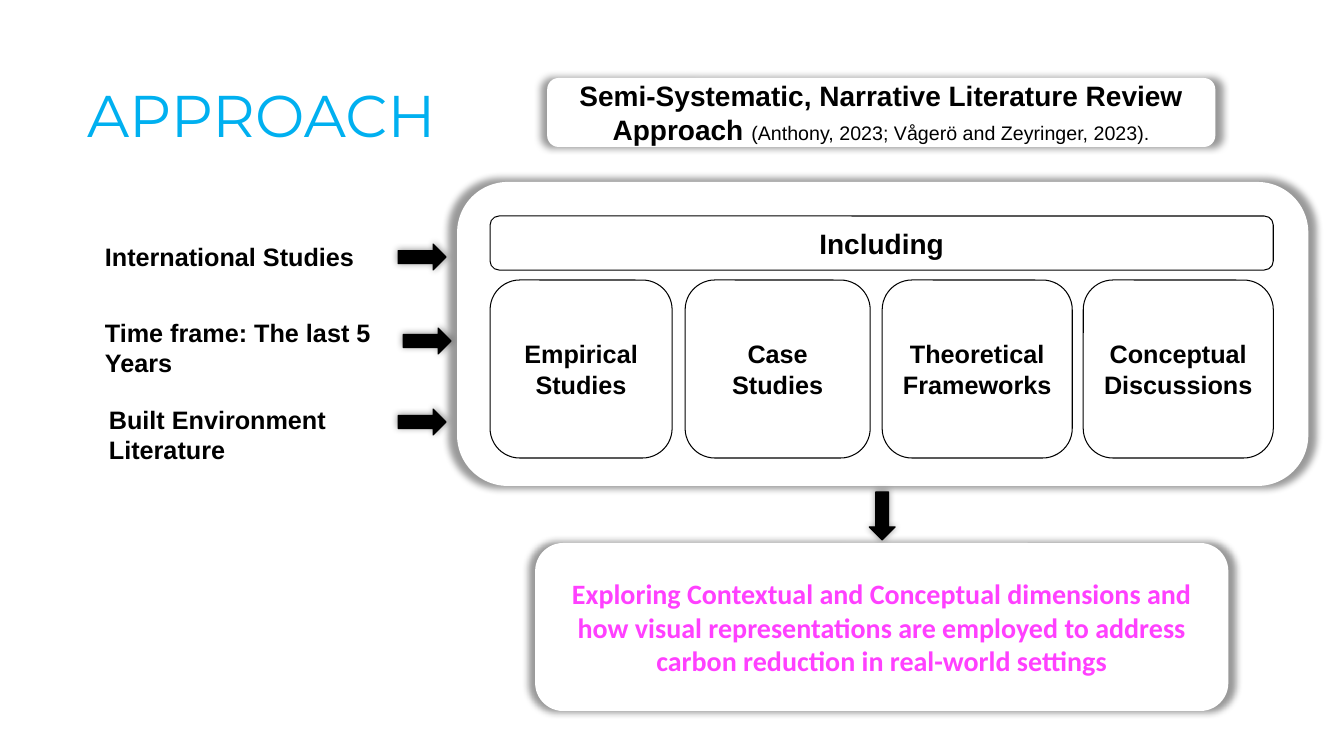
from lxml import etree
from pptx import Presentation
from pptx import util as u
from pptx.dml.color import RGBColor
from pptx.enum import shapes, text
from pptx.oxml.ns import qn

# Content: places are left, top, width, height in px
TITLE = ("APPROACH", (87, 71, 388, 94))
METHOD = ([("Semi-Systematic, Narrative Literature Review Approach ", "head"),
           ("(Anthony, 2023; Vågerö and Zeyringer, 2023).", "cite")],
          (547, 78, 668, 69))
PANEL = (457, 182, 851, 304)
BANNER = ("Including", (490, 216, 783, 54))
CARDS = [  # text, left, width
    ("Empirical Studies", 490, 182),
    ("Case Studies", 685, 185),
    ("Theoretical Frameworks", 882, 190),
    ("Conceptual Discussions", 1083, 190),
]
ROW = (280, 178)  # top, height of the cards
RESULT = ("Exploring Contextual and Conceptual dimensions and how visual "
          "representations are employed to address carbon reduction in "
          "real-world settings", (535, 543, 693, 168))
SCOPE = [  # text, place, left and top of its arrow
    ("International Studies", (95, 236, 302, 40), (409, 233)),
    ("Time frame: The last 5 Years", (95, 312, 302, 71), (414, 317)),
    ("Built Environment Literature", (99, 399, 302, 71), (409, 398)),
]
DOWN = (869, 492)
ARROW = (26, 48)  # width, height

# Theme
BLACK, WHITE = "000000", "FFFFFF"
THEME = {
    "title": ("00B0F0", dict(name="Montserrat", size=u.Pt(42), bold=False)),
    "head": (BLACK, dict(name="Arial", size=u.Pt(20), bold=True)),
    "cite": (BLACK, dict(name="Arial", size=u.Pt(14), bold=False)),
    "card": (BLACK, dict(name="Arial", size=u.Pt(18), bold=True)),
    "result": ("FF40FF", dict(name="Calibri", size=u.Pt(20), bold=True)),
}
EMU = 914400 / 100.8


def px(*vals):
    return [round(v * EMU) for v in vals]


def put(obj, vals):
    for key, val in vals.items():
        setattr(obj, key, val)


def write(frame, runs, align, anchor):
    put(frame, dict(word_wrap=True, vertical_anchor=anchor))
    para = frame.paragraphs[0]
    para.alignment = align
    for words, style in runs:
        run = para.add_run()
        run.text = words
        color, font = THEME[style]
        put(run.font, font)
        run.font.color.rgb = RGBColor.from_string(color)
    return para


def glow(shape):
    """Add a soft shadow, a little larger than the shape."""
    fx = shape._element.spPr.find(qn("a:effectLst"))
    shade = etree.SubElement(fx, qn("a:outerShdw"), blurRad=str(u.Pt(5)),
                             sx="102000", sy="102000", algn="ctr", rotWithShape="0")
    color = etree.SubElement(shade, qn("a:prstClr"), val="black")
    etree.SubElement(color, qn("a:alpha"), val="40000")


def draw(kind, place, fill=None, line=None, soft=False):
    shape = slide.shapes.add_shape(kind, *px(*place))
    shape.shadow.inherit = False
    if fill:
        shape.fill.solid()
        shape.fill.fore_color.rgb = RGBColor.from_string(fill)
    else:
        shape.fill.background()
    if line:
        shape.line.color.rgb = RGBColor.from_string(line)
        shape.line.width = u.Pt(0.75)
    else:
        shape.line.fill.background()
    if soft:
        glow(shape)
    return shape


def box(place, runs=(), **look):
    shape = draw(shapes.MSO_SHAPE.ROUNDED_RECTANGLE, place, **look)
    write(shape.text_frame, runs, text.PP_ALIGN.CENTER, text.MSO_ANCHOR.MIDDLE)


def arrow(spot, turn=0):
    shape = draw(shapes.MSO_SHAPE.DOWN_ARROW, spot + ARROW,
                 fill=BLACK, line=BLACK, soft=True)
    shape.rotation = turn


deck = Presentation()
deck.slide_width, deck.slide_height = u.Inches(13.33), u.Inches(7.5)
slide = deck.slides.add_slide(deck.slide_layouts[5])
LEFT, TOP = text.PP_ALIGN.LEFT, text.MSO_ANCHOR.TOP

# Title
words, place = TITLE
title = slide.shapes.title
put(title, dict(zip(("left", "top", "width", "height"), px(*place))))
put(title.text_frame, dict(auto_size=text.MSO_AUTO_SIZE.NONE, margin_left=0,
                           margin_top=u.Inches(0.21), margin_right=0, margin_bottom=0))
write(title.text_frame, [(words, "title")], LEFT, TOP).line_spacing = 0.8

# Method, panel and result
card = dict(fill=WHITE, soft=True)
box(METHOD[1], METHOD[0], **card)
box(PANEL, **card)
arrow(DOWN)
box(RESULT[1], [(RESULT[0], "result")], **card)

# Inside the panel
box(BANNER[1], [(BANNER[0], "head")], line=BLACK)
for words, left, width in CARDS:
    box((left, ROW[0], width, ROW[1]), [(words, "card")], line=BLACK)

# Scope labels with their arrows
for words, place, spot in SCOPE:
    label = slide.shapes.add_textbox(*px(*place))
    write(label.text_frame, [(words, "card")], LEFT, TOP)
    arrow(spot, 270)

deck.save("out.pptx")
